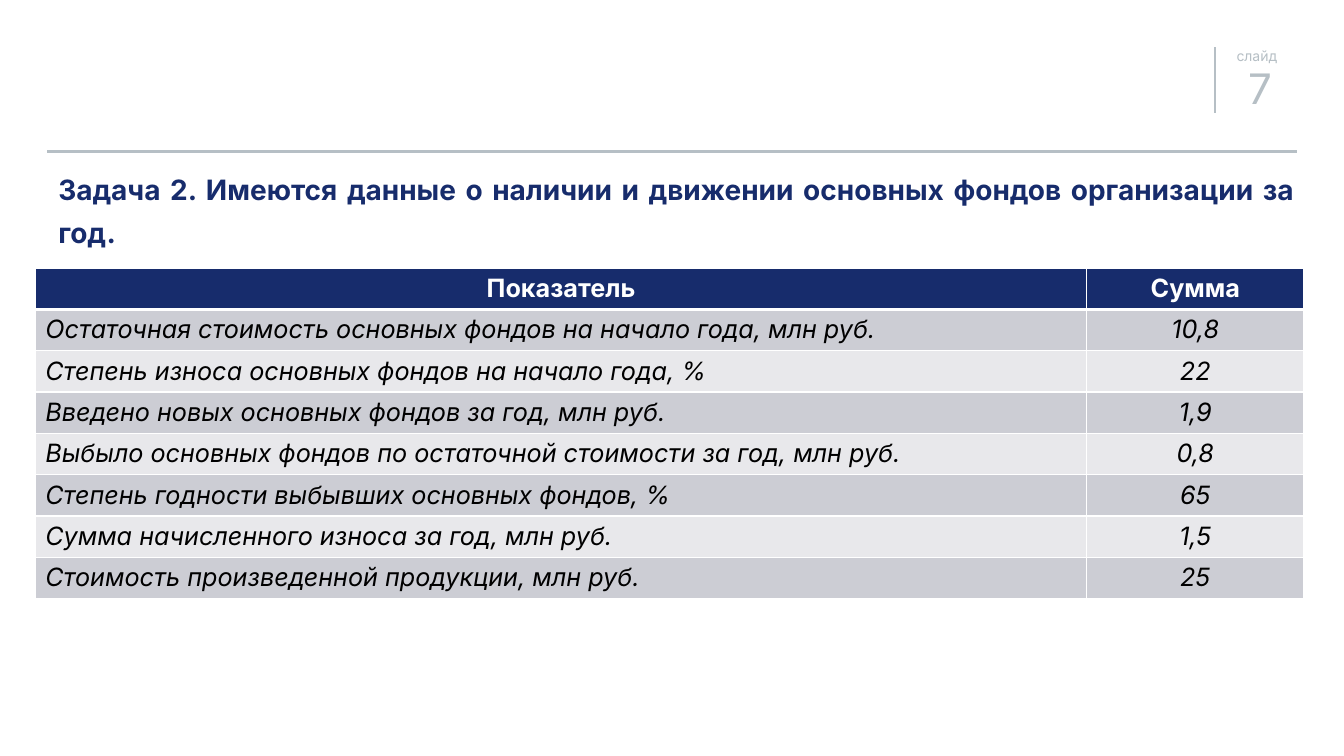
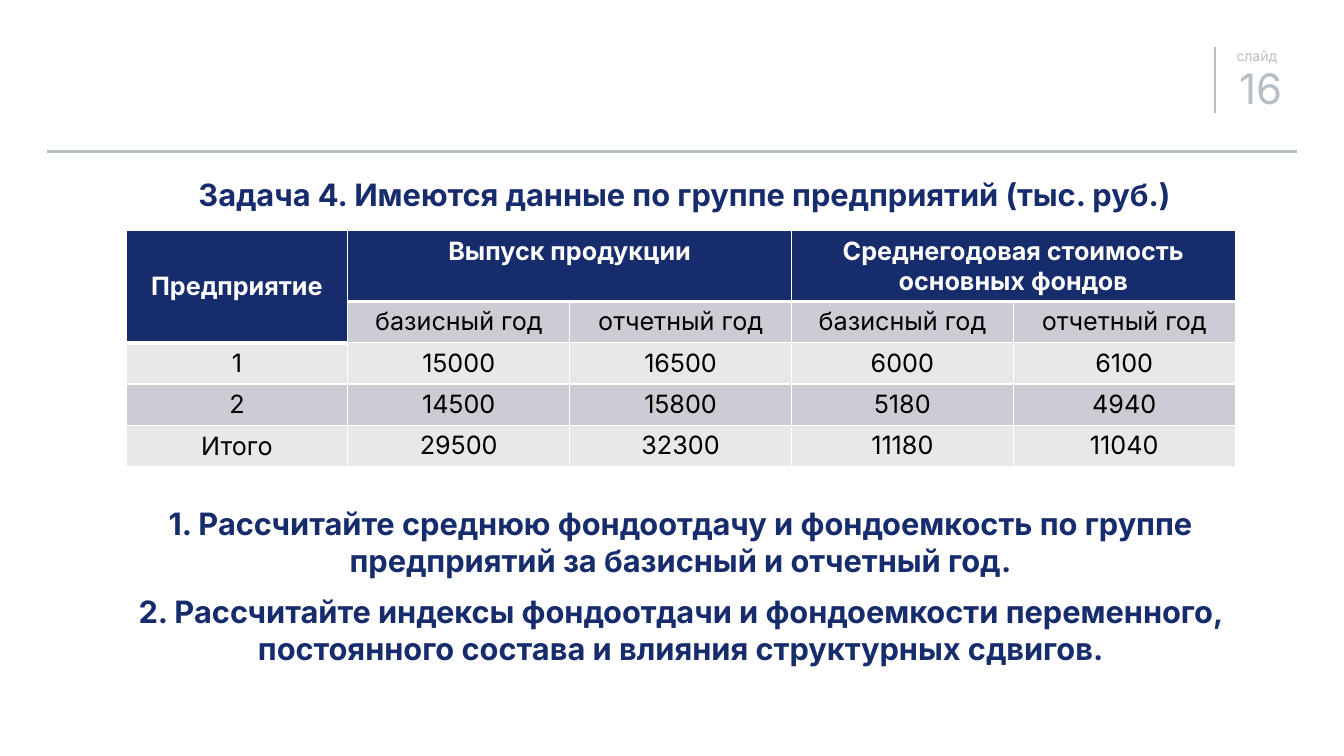
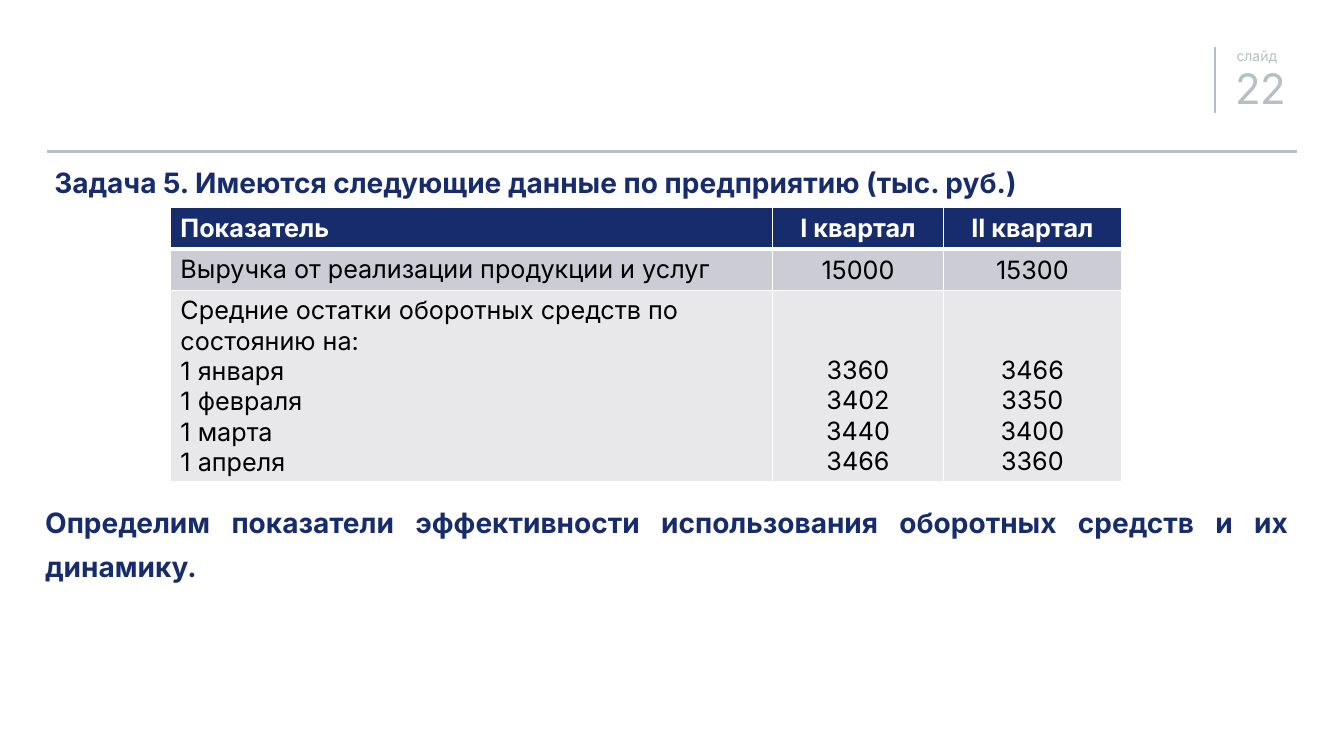
from lxml import etree
from pptx import Presentation
from pptx.dml.color import RGBColor
from pptx.enum.shapes import MSO_CONNECTOR
from pptx.enum.text import MSO_ANCHOR, PP_ALIGN
from pptx.oxml.ns import qn
from pptx.util import Inches, Pt

LINE = MSO_CONNECTOR.STRAIGHT
LEFT, MID, JUST = PP_ALIGN.LEFT, PP_ALIGN.CENTER, PP_ALIGN.JUSTIFY
TOP, CENTER, BOTTOM = MSO_ANCHOR.TOP, MSO_ANCHOR.MIDDLE, MSO_ANCHOR.BOTTOM

FACE = "Inter"
NAVY, GRAY, WHITE, BLACK = "172C6C", "B6BFC5", "FFFFFF", "000000"
BANDS = ["CCCDD4", "E8E8EB"]
ROW = 0.41
RULES = [((12.05, 0.47, 12.05, 1.12), 1), ((0.47, 1.5, 12.86, 1.5), 2)]
EDGES = {"a:lnL": 1, "a:lnR": 1, "a:lnT": 1, "a:lnB": 3}

SLIDES = [
    {
        "page": "7",
        "texts": [
            {"at": (0.48, 1.56, 12.46, 0.93), "size": 20, "align": JUST, "lead": 1.3,
             "lines": ["Задача 2. Имеются данные о наличии и движении основных фондов организации за год."]},
        ],
        "table": {
            "at": (0.35, 2.66),
            "cols": [10.43, 2.15],
            "rows": [ROW] * 8,
            "first": LEFT, "head": MID, "slant": True,
            "data": [
                ("Показатель", "Сумма"),
                ("Остаточная стоимость основных фондов на начало года, млн руб.", "10,8"),
                ("Степень износа основных фондов на начало года, %", "22"),
                ("Введено новых основных фондов за год, млн руб.", "1,9"),
                ("Выбыло основных фондов по остаточной стоимости за год, млн руб.", "0,8"),
                ("Степень годности выбывших основных фондов, %", "65"),
                ("Сумма начисленного износа за год, млн руб.", "1,5"),
                ("Стоимость произведенной продукции, млн руб.", "25"),
            ],
        },
    },
    {
        "page": "16",
        "texts": [
            {"at": (1.87, 1.58, 10.72, 0.58), "size": 22, "align": JUST, "lead": 1.3,
             "lines": ["Задача 4. Имеются данные по группе предприятий (тыс. руб.)"]},
            {"at": (0.84, 4.96, 11.82, 1.77), "size": 22, "align": MID, "lead": 1.0,
             "lines": [
                 "1. Рассчитайте среднюю фондоотдачу и фондоемкость по группе предприятий за базисный и отчетный год.",
                 "2. Рассчитайте индексы фондоотдачи и фондоемкости переменного, постоянного состава и влияния структурных сдвигов.",
             ]},
        ],
        "table": {
            "at": (1.25, 2.29),
            "cols": [2.2] * 5,
            "rows": [0.68] + [ROW] * 4,
            "first": MID, "head": MID, "anchor": CENTER,
            "spans": [((0, 0), (1, 0)), ((0, 1), (0, 2)), ((0, 3), (0, 4))],
            "data": [
                ("Предприятие", "Выпуск продукции", None, "Среднегодовая стоимость основных фондов", None),
                (None, "базисный год", "отчетный год", "базисный год", "отчетный год"),
                ("1", "15000", "16500", "6000", "6100"),
                ("2", "14500", "15800", "5180", "4940"),
                ("Итого", "29500", "32300", "11180", "11040"),
            ],
        },
    },
    {
        "page": "22",
        "texts": [
            {"at": (0.44, 1.49, 12.53, 0.49), "size": 20, "align": JUST, "lead": 1.3,
             "lines": ["Задача 5. Имеются следующие данные по предприятию (тыс. руб.)"]},
            {"at": (0.35, 4.87, 12.53, 0.98), "size": 20, "align": JUST, "lead": 1.3,
             "lines": ["Определим показатели эффективности использования оборотных средств и их динамику."]},
        ],
        "table": {
            "at": (1.69, 2.06),
            "cols": [5.97, 1.7, 1.76],
            "rows": [ROW, ROW, 1.89],
            "first": LEFT, "head": LEFT, "rest": BOTTOM,
            "data": [
                ("Показатель", "I квартал", "II квартал"),
                ("Выручка от реализации продукции и услуг", "15000", "15300"),
                ("Средние остатки оборотных средств по состоянию на:\n1 января\n1 февраля\n1 марта\n1 апреля",
                 "3360\n3402\n3440\n3466", "3466\n3350\n3400\n3360"),
            ],
        },
    },
]


def color(code):
    return RGBColor.from_string(code)


def style(para, align, tone, **form):
    para.alignment = align
    font = para.font
    font.name = FACE
    font.color.rgb = color(tone)
    for key, value in form.items():
        setattr(font, key, value)


def add_box(slide, place, lines):
    frame = slide.shapes.add_textbox(*map(Inches, place)).text_frame
    frame.word_wrap = True
    frame.text = "\n".join(lines)
    return frame


def add_frame(slide, page):
    for ends, width in RULES:
        rule = slide.shapes.add_connector(LINE, *map(Inches, ends))
        rule.line.color.rgb = color(GRAY)
        rule.line.width = Pt(width)
        etree.SubElement(rule._element.spPr, qn("a:effectLst"))
    frame = add_box(slide, (12.05, 0.47, 0.82, 0.66), ["слайд", page])
    for side in ("left", "right", "bottom"):
        setattr(frame, "margin_" + side, 0)
    frame.margin_top = Inches(0.02)
    for para, size, lead, inset in zip(frame.paragraphs, (10, 30), (10.6, 34.5), (0.01, 0.09)):
        para._p.get_or_add_pPr().set("marL", str(Inches(inset)))
        para.line_spacing = Pt(lead)
        style(para, MID, GRAY, size=Pt(size))


def add_text(slide, item):
    frame = add_box(slide, item["at"], item["lines"])
    for index, para in enumerate(frame.paragraphs):
        para.line_spacing = item["lead"]
        if index:
            para.space_before = Pt(10)
        style(para, item["align"], NAVY, size=Pt(item["size"]), bold=True)


def add_edges(cell):
    props = cell._tc.get_or_add_tcPr()
    for tag, width in EDGES.items():
        edge = etree.SubElement(props, qn(tag), w=str(Pt(width)))
        fill = etree.SubElement(edge, qn("a:solidFill"))
        etree.SubElement(fill, qn("a:srgbClr"), val=WHITE)


def add_grid(slide, item):
    data, cols, rows = item["data"], item["cols"], item["rows"]
    place = map(Inches, (*item["at"], sum(cols), sum(rows)))
    table = slide.shapes.add_table(len(rows), len(cols), *place).table
    for part, width in zip(table.columns, cols):
        part.width = Inches(width)
    for part, height in zip(table.rows, rows):
        part.height = Inches(height)
    for start, end in item.get("spans", []):
        table.cell(*start).merge(table.cell(*end))
    for r, values in enumerate(data):
        for c, value in enumerate(values):
            cell = table.cell(r, c)
            head = r == 0 or value is None
            if head:
                add_edges(cell)
            cell.fill.solid()
            cell.fill.fore_color.rgb = color(NAVY if head else BANDS[(r - 1) % 2])
            if value is None:
                continue
            cell.text_frame.text = value
            cell.vertical_anchor = item.get("rest", TOP) if c else item.get("anchor", TOP)
            align = MID if c else item["head" if head else "first"]
            slant = item.get("slant", False) and not head
            for para in cell.text_frame.paragraphs:
                style(para, align, WHITE if head else BLACK, size=Pt(18), bold=head, italic=slant)


def main():
    deck = Presentation()
    deck.slide_width, deck.slide_height = Inches(13.33), Inches(7.5)
    for item in SLIDES:
        slide = deck.slides.add_slide(deck.slide_layouts[6])
        add_frame(slide, item["page"])
        add_grid(slide, item["table"])
        for text in item["texts"]:
            add_text(slide, text)
    deck.save("out.pptx")


if __name__ == "__main__":
    main()
